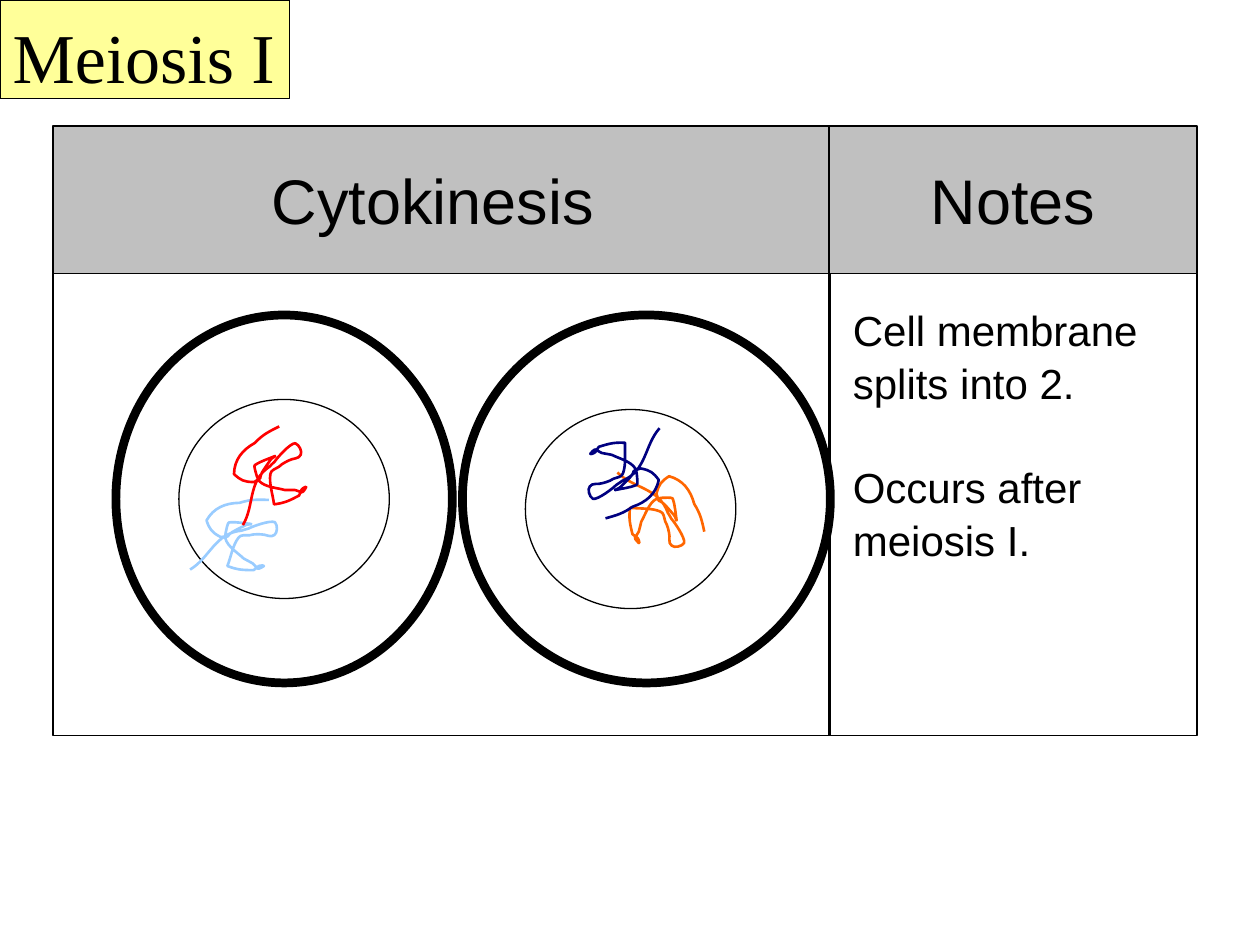
"""Build the Meiosis I slide on cytokinesis."""
from typing import NamedTuple, Optional

from lxml.etree import SubElement
from pptx import Presentation
from pptx.dml.color import RGBColor as RGB
from pptx.enum.shapes import MSO_SHAPE as SHAPE
from pptx.enum.text import MSO_ANCHOR as ANCHOR, MSO_AUTO_SIZE as AUTO, PP_ALIGN as ALIGN
from pptx.oxml.ns import qn
from pptx.util import Inches, Pt

COLORS = {
    "black": "000000", "header": "C0C0C0", "title": "FFFF99",
    "sky": "99CCFF", "red": "FF0000", "orange": "FF6600", "navy": "000080",
}

STRAND_START = (69, 47)
STRAND_CURVES = [
    (67, 38), (66, 33), (61, 25), (58, 14), (52, 6), (41, 3),
    (35, 7), (33, 9), (31, 17), (34, 26), (31, 20), (37, 25),
    (40, 28), (45, 34), (45, 34), (46, 35), (47, 39), (47, 38),
    (46, 32), (46, 27), (44, 21), (44, 20), (41, 20), (40, 20),
    (37, 20), (34, 20), (31, 21), (25, 24), (22, 34), (19, 39),
    (18, 42), (18, 44), (17, 47), (15, 52), (11, 50), (17, 56),
    (18, 57), (17, 53), (16, 52), (15, 51), (13, 50), (12, 49),
    (10, 41), (9, 37), (10, 28), (18, 29), (27, 28), (34, 31),
    (37, 32), (37, 36), (38, 39), (40, 42), (41, 48), (41, 48),
    (42, 51), (40, 56), (43, 58), (45, 60), (51, 59), (53, 56),
    (54, 52), (45, 39), (43, 37), (42, 35), (40, 32), (40, 32),
    (33, 12), (13, 13), (0, 0),
]


class Column(NamedTuple):
    heading: str
    left: float
    width: float


class Oval(NamedTuple):
    left: float
    top: float
    width: float
    height: float
    weight: float


class Chromosome(NamedTuple):
    left: float
    top: float
    rotation: float
    color: str


COLUMNS = [Column("Cytokinesis ", 0.42, 6.17), Column("Notes", 6.58, 2.92)]
NUCLEI = [Oval(1.42, 3.17, 1.67, 1.58, 0.75), Oval(4.17, 3.25, 1.67, 1.58, 0.75)]
MEMBRANES = [Oval(0.92, 2.5, 2.67, 2.92, 5), Oval(3.67, 2.5, 2.92, 2.92, 5)]
CHROMOSOMES = [
    Chromosome(1.54, 3.96, 284.3, "sky"),
    Chromosome(1.79, 3.46, 256, "red"),
    Chromosome(4.9, 3.75, 0, "orange"),
    Chromosome(4.61, 3.46, 86.7, "navy"),
]


def rgb(name: str) -> RGB:
    """Return a named colour."""
    return RGB.from_string(COLORS[name])


def style_shape(sp, fill: Optional[str] = None, line: str = "black", weight: float = 0.75) -> None:
    """Set the fill and outline of a shape."""
    if fill:
        sp.fill.solid()
        sp.fill.fore_color.rgb = rgb(fill)
    else:
        sp.fill.background()
    sp.line.color.rgb = rgb(line)
    sp.line.width = Pt(weight)


def style_text(tf, size: float, font: str, align: ALIGN) -> None:
    """Format every paragraph and run of a text frame."""
    for p in tf.paragraphs:
        p.alignment = align
        for r in p.runs:
            r.font.size = Pt(size)
            r.font.name = font
            r.font.color.rgb = rgb("black")


def add_preset(shapes, kind: SHAPE, left: float, top: float, width: float, height: float,
               fill: Optional[str] = None, weight: float = 0.75):
    """Add an outlined preset shape."""
    sp = shapes.add_shape(kind, Inches(left), Inches(top), Inches(width), Inches(height))
    sp.shadow.inherit = False
    style_shape(sp, fill, weight=weight)
    return sp


def add_heading(shapes, column: Column) -> None:
    """Add the grey heading of a column."""
    sp = add_preset(shapes, SHAPE.RECTANGLE, column.left, 1, column.width, 1.17, "header")
    tf = sp.text_frame
    tf.text = column.heading
    tf.word_wrap = False
    tf.vertical_anchor = ANCHOR.MIDDLE
    style_text(tf, 36, "Arial", ALIGN.CENTER)


def add_chromosome(shapes, chromosome: Chromosome) -> None:
    """Add a curved strand turned to its angle."""
    builder = shapes.build_freeform(*STRAND_START, scale=Inches(0.01))
    builder.add_line_segments(STRAND_CURVES, close=False)
    sp = builder.convert_to_shape(Inches(chromosome.left), Inches(chromosome.top))
    outline = sp._element.find(".//" + qn("a:path"))
    segments = outline.findall(qn("a:lnTo"))
    for i in range(0, len(segments), 3):
        curve = SubElement(outline, qn("a:cubicBezTo"))
        for segment in segments[i:i + 3]:
            curve.append(segment[0])
            outline.remove(segment)
    sp.rotation = chromosome.rotation
    sp.shadow.inherit = False
    style_shape(sp, line=chromosome.color, weight=1.5)


def add_notes(shapes) -> None:
    """Add the notes on cytokinesis."""
    tb = shapes.add_textbox(Inches(6.67), Inches(2.33), Inches(2.58), Inches(2.12))
    tf = tb.text_frame
    tf.text = "Cell membrane splits into 2.\nOccurs after meiosis I."
    tf.word_wrap = True
    tf.margin_top = Inches(0.07)
    style_text(tf, 24, "Arial", ALIGN.LEFT)
    for p in tf.paragraphs:
        p.line_spacing = 1.05
    tf.paragraphs[1].space_before = Pt(29)


def set_title(title) -> None:
    """Fill and place the title."""
    title.left, title.top = Inches(0), Inches(0)
    title.width, title.height = Inches(2.3), Inches(0.78)
    style_shape(title, "title")
    tf = title.text_frame
    tf.text = "Meiosis I"
    tf.word_wrap = False
    tf.auto_size = AUTO.NONE
    tf.vertical_anchor = ANCHOR.TOP
    tf.margin_top = Inches(0.11)
    style_text(tf, 40, "Times New Roman", ALIGN.LEFT)


def main() -> None:
    """Build and save the slide."""
    prs = Presentation()
    prs.slide_width, prs.slide_height = Inches(10), Inches(7.5)
    s = prs.slides.add_slide(prs.slide_layouts[5])
    set_title(s.shapes.title)
    for column in COLUMNS:
        add_preset(s.shapes, SHAPE.RECTANGLE, column.left, 2.17, column.width, 3.67)
    for column in COLUMNS:
        add_heading(s.shapes, column)
    for oval in NUCLEI + MEMBRANES:
        add_preset(s.shapes, SHAPE.OVAL, *oval[:4], weight=oval.weight)
    add_notes(s.shapes)
    for chromosome in CHROMOSOMES:
        add_chromosome(s.shapes, chromosome)
    prs.save("out.pptx")


if __name__ == "__main__":
    main()
